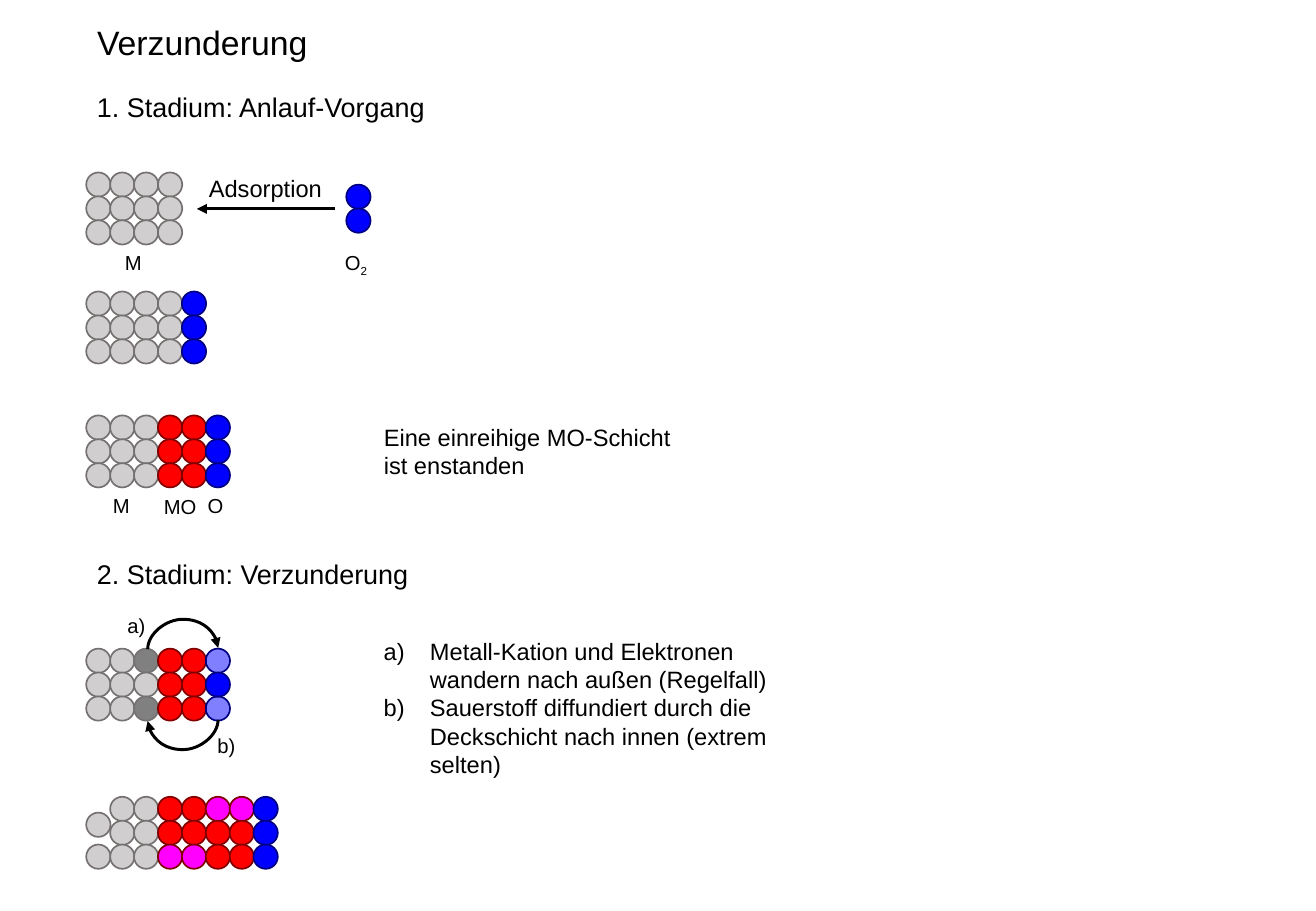
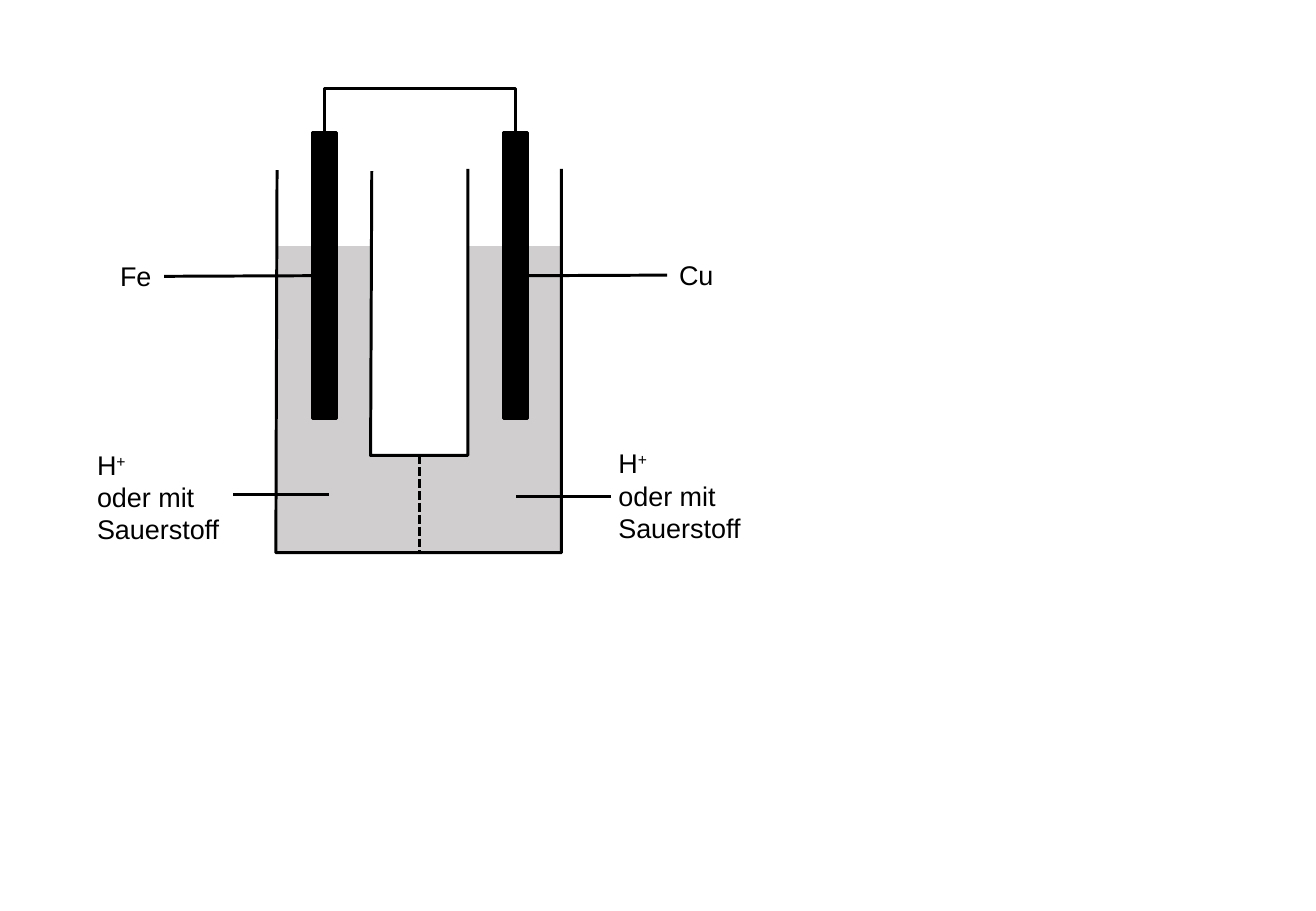
import pptx
import pptx.dml.color
import pptx.enum.dml
import pptx.enum.shapes
import pptx.enum.text
import pptx.oxml.ns
import pptx.oxml.xmlchemy
import pptx.util
from pptx.util import Inches

FONT = "Arial"
BLACK, WHITE, GREY = "000000", "FFFFFF", "D0CECE"
STROKE = 1.75
TITLE, HEADING, BODY, LABEL = 20, 16, 14, 12

# Atom letter: fill, outline, opacity in percent
ATOMS = {
    "M": (GREY, "767171", 100),
    "K": ("808080", "767171", 100),
    "R": ("FF0000", "800000", 100),
    "N": ("FF00FF", "800000", 100),
    "O": ("0000FF", "000080", 100),
    "o": ("0000FF", "000080", 50),
}
DIAMETER = 0.2
PITCH = 1.18 / 6

# Left, top, rows of atoms
LATTICES = [
    (0.71, 1.42, ["MMMM"] * 3),
    (2.85, 1.52, ["O"] * 2),
    (0.71, 2.4, ["MMMMO"] * 3),
    (0.71, 3.42, ["MMMRRO"] * 3),
    (0.71, 5.34, ["MMKRRo", "MMMRRO", "MMKRRo"]),
    (0.71, 6.56, [" MMRRNNO", " MMRRRRO", "MMMNNRRO"]),
    (0.71, 6.69, ["M"]),
]

# Box, size, paragraphs; a part after "|" is lowered or raised
SCALING_TEXTS = [
    ((0.7, 0.13, 1.95, 0.44), TITLE, ["Verzunderung"]),
    ((0.7, 0.7, 2.93, 0.37), HEADING, ["1. Stadium: Anlauf-Vorgang"]),
    ((1.62, 1.38, 1.14, 0.34), BODY, ["Adsorption"]),
    ((0.93, 2.01, 0.34, 0.3), LABEL, ["M"]),
    ((2.74, 2.01, 0.4, 0.3), LABEL, ["O|2"]),
    ((0.83, 4.01, 0.34, 0.3), LABEL, ["M"]),
    ((1.25, 4.02, 0.47, 0.3), LABEL, ["MO"]),
    ((1.61, 4.01, 0.33, 0.3), LABEL, ["O"]),
    ((3.06, 3.43, 2.58, 0.57), BODY, ["Eine einreihige MO-Schicht", "ist enstanden"]),
    ((0.7, 4.54, 2.8, 0.37), HEADING, ["2. Stadium: Verzunderung"]),
    ((0.95, 5, 0.35, 0.3), LABEL, ["a)"]),
    ((1.69, 5.99, 0.35, 0.3), LABEL, ["b)"]),
]
MECHANISMS = [
    "Metall-Kation und Elektronen wandern nach außen (Regelfall)",
    "Sauerstoff diffundiert durch die Deckschicht nach innen (extrem selten)",
]
ELECTROLYTE = ["H|+", "oder mit", "Sauerstoff"]

JAR = [(4.62, 1.39), (4.62, 4.55), (2.27, 4.55), (2.28, 1.4)]
JAR_GAP = [(3.85, 1.39), (3.85, 3.75), (3.05, 3.75), (3.06, 1.41)]
# Metal, electrode left, label box, electrode side, label side
ELECTRODES = [
    ("Fe", 2.57, (0.89, 2.09, 0.46, 0.37), 1, 3),
    ("Cu", 4.14, (5.49, 2.08, 0.49, 0.37), 3, 1),
]
# Label box, pointer start, pointer end
ELECTROLYTE_LABELS = [
    ((0.7, 3.64, 1.22, 0.91), (1.92, 4.07), (2.71, 4.07)),
    ((4.99, 3.63, 1.22, 0.91), (5.03, 4.09), (4.25, 4.09)),
]

LINE_KINDS = pptx.enum.shapes.MSO_CONNECTOR
SHAPES = pptx.enum.shapes.MSO_SHAPE


def rgb(colour):
    return pptx.dml.color.RGBColor.from_string(colour)


def inches(values):
    return [Inches(value) for value in values]


def add_element(parent, tag, **attributes):
    child = pptx.oxml.xmlchemy.OxmlElement(tag)
    for key, value in attributes.items():
        child.set(key, str(value))
    parent.append(child)
    return child


def style(shape, fill, line, width=STROKE):
    shape.shadow.inherit = False
    shape.fill.solid()
    shape.fill.fore_color.rgb = rgb(fill)
    shape.line.color.rgb = rgb(line)
    shape.line.width = pptx.util.Pt(width)


def add_text(slide, box, paragraphs, size=HEADING, baseline=0, wrap=False, numbered=False):
    label = slide.shapes.add_textbox(*inches(box))
    frame = label.text_frame
    frame.word_wrap = wrap
    frame.auto_size = pptx.enum.text.MSO_AUTO_SIZE.SHAPE_TO_FIT_TEXT
    for number, content in enumerate(paragraphs):
        paragraph = frame.add_paragraph() if number else frame.paragraphs[0]
        for position, part in enumerate(content.split("|")):
            run = paragraph.add_run()
            run.text = part
            run.font.name = FONT
            run.font.size = pptx.util.Pt(size)
            run.font.color.rgb = rgb(BLACK)
            if position:
                run.font._element.set("baseline", str(baseline * 1000))
        if numbered:
            properties = paragraph._p.get_or_add_pPr()
            properties.set("marL", str(Inches(0.38)))
            properties.set("indent", str(-Inches(0.38)))
            add_element(properties, "a:buAutoNum", type="alphaLcParenR")
    return label


def add_line(slide, start, end, kind=LINE_KINDS.STRAIGHT, arrow=False, dash=None):
    line = slide.shapes.add_connector(kind, *inches(start + end))
    line.line.color.rgb = rgb(BLACK)
    line.line.width = pptx.util.Pt(STROKE)
    if dash:
        line.line.dash_style = dash
    if arrow:
        add_element(line.line._get_or_add_ln(), "a:tailEnd", type="triangle")
    add_element(line._element.spPr, "a:effectLst")
    return line


def add_arch(slide, start, end, kind, depth, **options):
    """Draw a connector, turned by 90 degrees, that bulges by depth inches."""
    arch = add_line(slide, start, end, kind, **options)
    properties = arch._element.spPr
    properties.find(pptx.oxml.ns.qn("a:xfrm")).set("rot", "5400000")
    guides = properties.find(pptx.oxml.ns.qn("a:prstGeom")).get_or_add_avLst()
    share = round(depth / abs(end[0] - start[0]) * 100000)
    add_element(guides, "a:gd", name="adj1", fmla=f"val {share}")


def add_lattice(slide, left, top, rows):
    for row, letters in enumerate(rows):
        for column, letter in enumerate(letters):
            if letter == " ":
                continue
            fill, outline, opacity = ATOMS[letter]
            box = (left + column * PITCH, top + row * PITCH, DIAMETER, DIAMETER)
            atom = slide.shapes.add_shape(SHAPES.OVAL, *inches(box))
            style(atom, fill, outline, 1)
            if opacity < 100:
                colour = atom._element.spPr.find(".//" + pptx.oxml.ns.qn("a:srgbClr"))
                add_element(colour, "a:alpha", val=opacity * 1000)


def add_outline(slide, points, fill):
    start, *others = [tuple(inches(point)) for point in points]
    builder = slide.shapes.build_freeform(*start)
    builder.add_line_segments(others, close=False)
    outline = builder.convert_to_shape()
    style(outline, fill, BLACK)
    return outline


def build_scaling(slide):
    for lattice in LATTICES:
        add_lattice(slide, *lattice)
    for box, size, paragraphs in SCALING_TEXTS:
        add_text(slide, box, paragraphs, size=size, baseline=-25)
    add_text(slide, (3.06, 5.19, 3.36, 1.28), MECHANISMS, size=BODY, wrap=True, numbered=True)
    add_line(slide, (2.76, 1.72), (1.62, 1.72), arrow=True)
    add_arch(slide, (1.51, 5.63), (1.5, 5.05), LINE_KINDS.CURVE, 0.25, arrow=True)
    add_arch(slide, (1.5, 5.64), (1.51, 6.22), LINE_KINDS.CURVE, 0.25, arrow=True)


def build_cell(slide):
    jar = add_outline(slide, JAR, GREY)
    jar.fill.gradient()
    jar.fill.gradient_angle = 270
    for stop, colour in zip(jar.fill.gradient_stops, (WHITE, GREY)):
        stop.position = 0.2
        stop.color.rgb = rgb(colour)
    add_outline(slide, JAR_GAP, WHITE)

    for metal, left, box, electrode_side, label_side in ELECTRODES:
        electrode = slide.shapes.add_shape(SHAPES.RECTANGLE, *inches((left, 1.09, 0.2, 2.36)))
        style(electrode, BLACK, BLACK)
        label = add_text(slide, box, [metal])
        pointer = add_line(slide, box[:2], (left, 2.27))
        pointer.begin_connect(label, label_side)
        pointer.end_connect(electrode, electrode_side)

    add_arch(slide, (3.46, 1.88), (3.45, 0.31), LINE_KINDS.ELBOW, 0.38)
    add_line(slide, (3.45, 3.75), (3.45, 4.55), dash=pptx.enum.dml.MSO_LINE.SQUARE_DOT)
    for box, start, end in ELECTROLYTE_LABELS:
        add_text(slide, box, ELECTROLYTE, baseline=30)
        add_line(slide, start, end)


def main():
    deck = pptx.Presentation()
    deck.slide_width, deck.slide_height = inches((10.83, 7.5))
    for build in (build_scaling, build_cell):
        build(deck.slides.add_slide(deck.slide_layouts[6]))
    deck.save("out.pptx")


if __name__ == "__main__":
    main()
